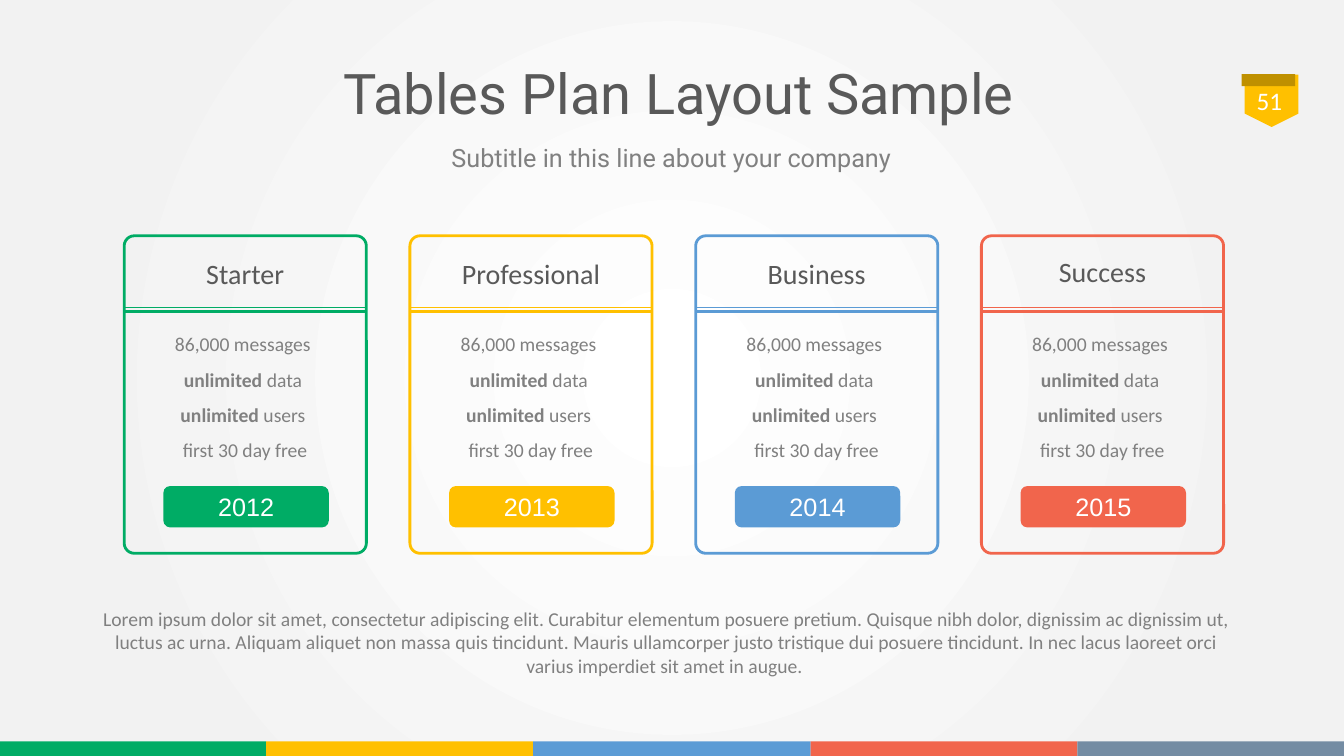
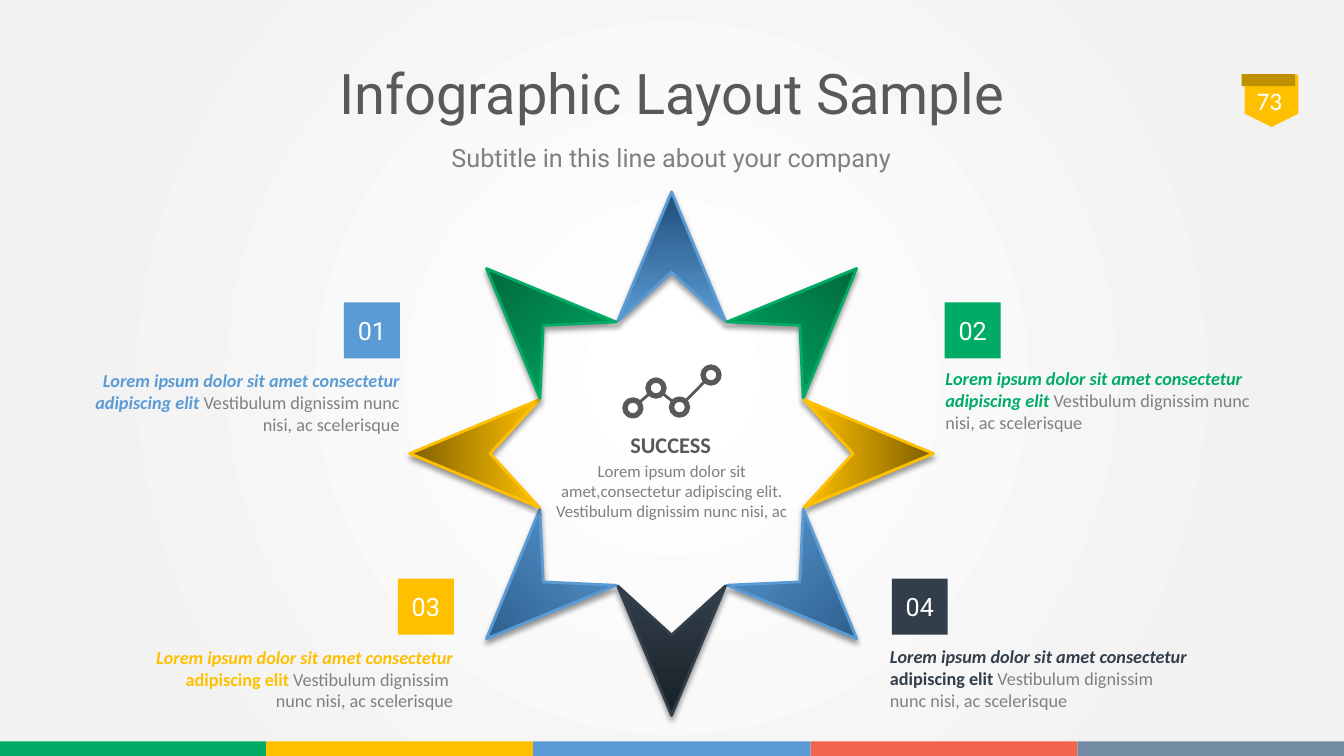
import itertools
import math

import pptx
import pptx.dml.color
import pptx.enum.dml
import pptx.enum.shapes
import pptx.enum.text
import pptx.oxml
import pptx.oxml.ns
import pptx.util

Pt = pptx.util.Pt
SHAPE = pptx.enum.shapes.MSO_SHAPE
ALIGN = pptx.enum.text.PP_ALIGN
ANCHOR = pptx.enum.text.MSO_ANCHOR

GREEN, YELLOW, BLUE, RED = "00AC65", "FFC000", "5B9BD5", "F1654C"
SLATE, NAVY, GOLD = "748CA3", "323F4B", "BF9000"
DARK, GRAY, WHITE = "595959", "808080", "FFFFFF"

TITLE = {"name": "Roboto", "size": Pt(40), "color": DARK}
SUBTITLE = {"name": "Roboto", "size": Pt(18), "color": GRAY}
NUMBER = {"name": "Roboto", "size": Pt(18), "color": WHITE}
PAGE = {"name": "Calibri", "size": Pt(18), "color": WHITE}
YEAR = {"name": "Arial", "size": Pt(18), "color": WHITE}
PLAN = {"name": "Calibri", "size": Pt(20), "color": DARK}
BODY = {"name": "Calibri", "size": Pt(14), "color": GRAY}
STRONG = {**BODY, "bold": True}
CALLOUT = {"name": "Calibri", "size": Pt(13), "color": GRAY}
CORE_HEAD = {"name": "Calibri", "size": Pt(16), "color": DARK, "bold": True}
CORE_BODY = {"name": "Calibri", "size": Pt(12), "color": GRAY}

WIDE_INSETS = (9.4, 5)
FEATURES = [
    [("86,000 messages ", BODY)],
    [("unlimited", STRONG), (" data ", BODY)],
    [("unlimited", STRONG), (" users ", BODY)],
    [("first 30 day free", BODY)],
]


def rgb(color):
    return pptx.dml.color.RGBColor.from_string(color)


def paint(sp, fill=None, line=None, width=2):
    sp.shadow.inherit = False
    if fill:
        sp.fill.solid()
        sp.fill.fore_color.rgb = rgb(fill)
    else:
        sp.fill.background()
    if line:
        sp.line.color.rgb = rgb(line)
        sp.line.width = Pt(width)
    else:
        sp.line.fill.background()


def write(tf, paragraphs, align=ALIGN.CENTER, spacing=None):
    for i, runs in enumerate(paragraphs):
        p = tf.add_paragraph() if i else tf.paragraphs[0]
        p.alignment = align
        if spacing:
            p.line_spacing = spacing
        for text, style in runs:
            r = p.add_run()
            r.text = text
            for key, value in style.items():
                if key == "color":
                    r.font.color.rgb = rgb(value)
                else:
                    setattr(r.font, key, value)


def add_box(s, kind, box, fill=None, line=None, width=2, adj=None):
    sp = s.shapes.add_shape(kind, *map(Pt, box))
    paint(sp, fill, line, width)
    if adj is not None:
        sp.adjustments[0] = adj
    return sp


def add_label(s, kind, box, fill, text, style):
    tf = add_box(s, kind, box, fill).text_frame
    tf.vertical_anchor = ANCHOR.MIDDLE
    write(tf, [[(text, style)]])


def add_text(s, box, paragraphs, align=ALIGN.CENTER, anchor=ANCHOR.TOP,
             insets=(7.2, 3.6), spacing=None):
    tf = s.shapes.add_textbox(*map(Pt, box)).text_frame
    across, down = map(Pt, insets)
    values = {
        "word_wrap": True, "vertical_anchor": anchor,
        "margin_left": across, "margin_right": across,
        "margin_top": down, "margin_bottom": down,
    }
    for key, value in values.items():
        setattr(tf, key, value)
    write(tf, paragraphs, align, spacing)


def add_line(s, start, end, color, width):
    line = s.shapes.add_connector(
        pptx.enum.shapes.MSO_CONNECTOR.STRAIGHT, *map(Pt, start + end))
    line.line.color.rgb = rgb(color)
    line.line.width = Pt(width)
    line.element.spPr.append(
        pptx.oxml.parse_xml("<a:effectLst %s/>" % pptx.oxml.ns.nsdecls("a")))


def set_background(layout):
    layout.background.fill.solid()
    bg = layout.element.find(".//" + pptx.oxml.ns.qn("p:bgPr"))
    stops = "".join(
        f'<a:gs pos="{pos}"><a:srgbClr val="{color}"/></a:gs>'
        for pos, color in [(0, WHITE), (81000, "F2F2F2"), (100000, "F2F2F2")])
    bg.replace(bg[0], pptx.oxml.parse_xml(
        f'<a:gradFill {pptx.oxml.ns.nsdecls("a")} rotWithShape="1">'
        f'<a:gsLst>{stops}</a:gsLst><a:path path="circle">'
        '<a:fillToRect l="50000" t="50000" r="50000" b="50000"/>'
        '</a:path></a:gradFill>'))


def prepare_layout(prs):
    layout = prs.slide_layouts[5]
    set_background(layout)
    for ph in list(layout.placeholders):
        if ph.placeholder_format.idx:
            ph.element.getparent().remove(ph.element)
    title = layout.placeholders[0]
    box = {"left": 63.4, "top": 40.3, "width": 842.4, "height": 57.6}
    for key, value in box.items():
        setattr(title, key, Pt(value))
    return layout


def decorate_layout(s, layout):
    badge = add_box(s, SHAPE.PENTAGON, (889.6, 52.8, 37.4, 38.4), YELLOW, adj=0.255)
    badge.rotation = 90
    parts = [badge, add_box(s, SHAPE.RECTANGLE, (887, 53, 38.2, 8.6), GOLD)]
    edges = [0, 190.2, 380.8, 579, 769.6, 960]
    for (left, right), color in zip(itertools.pairwise(edges),
                                    [GREEN, YELLOW, BLUE, RED, SLATE]):
        parts.append(add_box(s, SHAPE.RECTANGLE, (left, 529.6, right - left, 10.4), color))
    for sp in parts:
        layout.shapes.element.append(sp.element)


def add_slide(prs, layout, title, page):
    s = prs.slides.add_slide(layout)
    tf = s.shapes.title.text_frame
    tf.auto_size = pptx.enum.text.MSO_AUTO_SIZE.NONE
    tf.vertical_anchor = ANCHOR.MIDDLE
    write(tf, [[(title, TITLE)]], spacing=0.9)
    add_text(s, (884.8, 53.3, 44, 37.4), [[(page, PAGE)]], anchor=ANCHOR.MIDDLE)
    add_text(s, (271.4, 97.9, 416.2, 28.8),
             [[("Subtitle in this line about your company", SUBTITLE)]])
    return s


def add_plan(s, left, name, name_top, year, color):
    width = 173
    add_box(s, SHAPE.ROUNDED_RECTANGLE, (left, 168.4, width, 226.8), line=color, adj=0.042)
    add_text(s, (left + 9, 224, 154.8, 145.4), FEATURES, insets=WIDE_INSETS, spacing=1.5)
    add_text(s, (left + 12, name_top, 149, 33.8), [[(name, PLAN)]],
             anchor=ANCHOR.MIDDLE, insets=WIDE_INSETS)
    for y, weight in [(219.6, 0.5), (222.5, 2)]:
        add_line(s, (left, y), (left + width, y), color, weight)
    add_label(s, SHAPE.ROUNDED_RECTANGLE, (left + 28, 347.2, 118.2, 29.6), color, year, YEAR)


def add_plans(s):
    plans = [
        ("Starter", 178.6, "2012", GREEN),
        ("Professional", 178.6, "2013", YELLOW),
        ("Business", 178.6, "2014", BLUE),
        ("Success", 177.1, "2015", RED),
    ]
    for i, plan in enumerate(plans):
        add_plan(s, 88.7 + i * 204.1, *plan)
    add_text(s, (56.9, 428.4, 838.8, 64), [[(
        "Lorem ipsum dolor sit amet, consectetur adipiscing elit. Curabitur elementum "
        "posuere pretium. Quisque nibh dolor, dignissim ac dignissim ut, luctus ac urna. "
        "Aliquam aliquet non massa quis tincidunt. Mauris ullamcorper justo tristique dui "
        "posuere tincidunt. In nec lacus laoreet orci varius imperdiet sit amet in augue. ",
        BODY)]], insets=WIDE_INSETS)


def add_ray(s, angle, dark, color):
    cx, cy, half, tip, notch, base = 479.7, 324, 38.5, 187, 129.6, 94.5
    points = [(cx, cy - tip), (cx + half, cy - base),
              (cx, cy - notch), (cx - half, cy - base)]
    corners = [(Pt(x), Pt(y)) for x, y in points]
    builder = s.shapes.build_freeform(*corners[0])
    builder.add_line_segments(corners[1:], close=True)
    sp = builder.convert_to_shape()
    paint(sp, color, color)
    sp.fill.gradient()
    sp.fill.gradient_angle = 270
    for stop, shade in zip(sp.fill.gradient_stops, (dark, color)):
        stop.color.rgb = rgb(shade)
    radius, turn = (tip + base) / 2, math.radians(angle)
    sp.left = Pt(cx + radius * math.sin(turn) - half)
    sp.top = Pt(cy - radius * math.cos(turn) - (tip - base) / 2)
    sp.rotation = angle
    effects = sp.element.spPr.find(pptx.oxml.ns.qn("a:effectLst"))
    effects.append(pptx.oxml.parse_xml(
        f'<a:outerShdw {pptx.oxml.ns.nsdecls("a")} blurRad="{Pt(4)}" dist="{Pt(3)}" '
        'dir="5400000" algn="t" rotWithShape="0"><a:srgbClr val="000000">'
        '<a:alpha val="40000"/></a:srgbClr></a:outerShdw>'))


def add_graph_icon(s):
    nodes = [(452.1, 291.4), (468.6, 277.2), (485.4, 290.8), (507.9, 267.9)]
    for start, end in itertools.pairwise(nodes):
        add_line(s, start, end, DARK, 2)
    size = 11.4
    for x, y in nodes:
        add_box(s, SHAPE.OVAL, (x - size / 2, y - size / 2, size, size), WHITE, DARK, 3.8)


def add_callout(s, number, color, corner, box, align, paragraphs):
    add_label(s, SHAPE.RECTANGLE, corner + (40, 40), color, number, NUMBER)
    add_text(s, box, paragraphs, align)


def lead_styles(color):
    bold = {**CALLOUT, "color": color, "bold": True}
    return bold, {**bold, "italic": True}


def short_callout(color):
    _, lead = lead_styles(color)
    return [[("Lorem ipsum dolor sit amet consectetur adipiscing elit ", lead),
             ("Vestibulum dignissim nunc nisi, ac scelerisque", CALLOUT)]]


def split_callout(color, middle):
    bold, lead = lead_styles(color)
    return [[("Lorem ipsum dolor sit amet consectetur ", lead),
             ("adipiscing elit ", bold), (middle, CALLOUT)],
            [("nunc nisi, ac scelerisque", CALLOUT)]]


def add_star(s):
    blue, green = ("1F4E79", BLUE), ("005632", GREEN)
    yellow, navy = ("806000", YELLOW), ("192026", NAVY)
    rays = [blue, green, yellow, blue, navy, blue, yellow, green]
    for i, colors in enumerate(rays):
        add_ray(s, i * 45, *colors)
    add_graph_icon(s)
    add_text(s, (419, 304.6, 120.2, 26.6), [[("SUCCESS", CORE_HEAD)]])
    add_text(s, (380.9, 325.4, 198, 51), [[(
        "Lorem ipsum dolor sit amet,consectetur adipiscing elit. "
        "Vestibulum dignissim nunc nisi, ac", CORE_BODY)]])
    callouts = [
        ("01", BLUE, (245.7, 216), (56.2, 260.6, 236.2, 54.7), ALIGN.RIGHT,
         short_callout(BLUE)),
        ("02", GREEN, (674.8, 216), (668.2, 258.8, 231.8, 54.7), ALIGN.LEFT,
         short_callout(GREEN)),
        ("03", YELLOW, (284.2, 413.3), (56.2, 457.9, 274.3, 54.7), ALIGN.RIGHT,
         split_callout(YELLOW, "Vestibulum dignissim ")),
        ("04", NAVY, (637, 413.3), (628.6, 457.4, 274.3, 54.7), ALIGN.LEFT,
         split_callout(NAVY, "Vestibulum dignissim")),
    ]
    for callout in callouts:
        add_callout(s, *callout)


def main():
    prs = pptx.Presentation()
    prs.slide_width, prs.slide_height = Pt(960), Pt(540)
    layout = prepare_layout(prs)
    plans = add_slide(prs, layout, "Tables Plan Layout Sample", "51")
    decorate_layout(plans, layout)
    add_plans(plans)
    add_star(add_slide(prs, layout, "Infographic Layout Sample ", "73"))
    prs.save("out.pptx")


if __name__ == "__main__":
    main()
